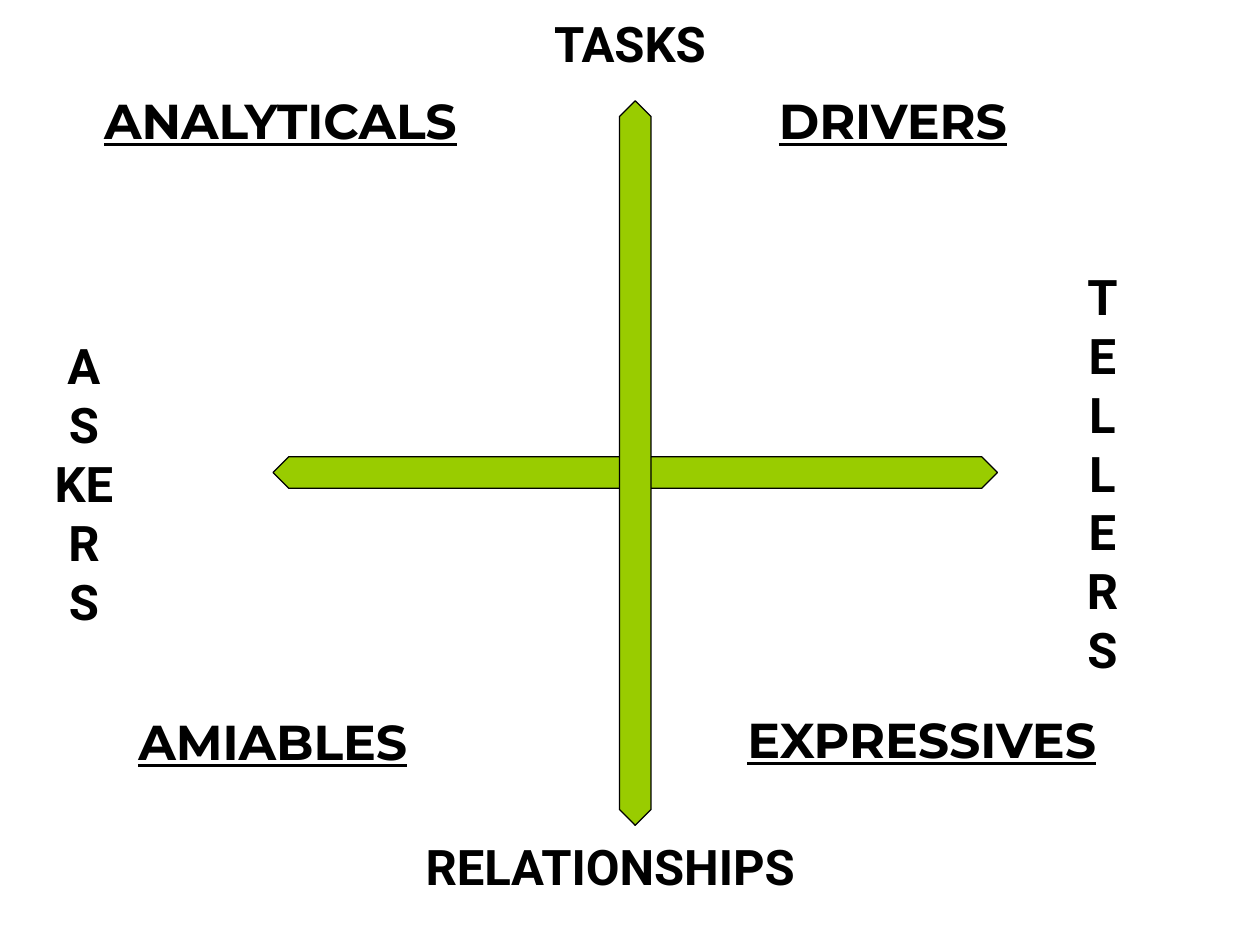
from pptx import Presentation
from pptx.dml.color import RGBColor
from pptx.enum import shapes, text
from pptx.util import Pt

COLORS = {"ink": "000000", "arrow": "99CC00"}
AXIS_FONT, STYLE_FONT = "Roboto", "Montserrat"
ARROW_WIDTH, ARROW_LENGTH = 18, 414
INSET = 7.2


def add_label(page, wording, left, top, width, height, font=AXIS_FONT):
    box = page.shapes.add_textbox(Pt(left), Pt(top), Pt(width), Pt(height))
    frame = box.text_frame
    frame.word_wrap = True
    para = frame.paragraphs[0]
    span = para.add_run()
    span.text = wording
    span.font.name = font
    span.font.size = Pt(28)
    span.font.bold = True
    span.font.color.rgb = RGBColor.from_string(COLORS["ink"])
    return box


def add_centred_label(page, wording, *place):
    frame = add_label(page, wording, *place).text_frame
    frame.vertical_anchor = text.MSO_ANCHOR.MIDDLE
    frame.paragraphs[0].alignment = text.PP_ALIGN.CENTER


def add_style_name(page, wording, left, top, width):
    frame = add_label(page, wording, left, top, width, 41, STYLE_FONT).text_frame
    frame.auto_size = text.MSO_AUTO_SIZE.SHAPE_TO_FIT_TEXT
    frame.paragraphs[0].runs[0].font.underline = True


def add_axis_arrow(page, center_x, center_y, rotation=0):
    arrow = page.shapes.add_shape(
        shapes.MSO_SHAPE.UP_DOWN_ARROW,
        Pt(center_x - ARROW_WIDTH / 2), Pt(center_y - ARROW_LENGTH / 2),
        Pt(ARROW_WIDTH), Pt(ARROW_LENGTH))
    arrow.rotation = rotation
    arrow.adjustments[0] = 0.875
    arrow.adjustments[1] = 1.82
    arrow.shadow.inherit = False
    arrow.fill.solid()
    arrow.fill.fore_color.rgb = RGBColor.from_string(COLORS["arrow"])
    arrow.line.color.rgb = RGBColor.from_string(COLORS["ink"])
    arrow.line.width = Pt(0.75)


def main():
    deck = Presentation()
    deck.slide_width, deck.slide_height = Pt(720), Pt(540)
    page = deck.slides.add_slide(deck.slide_layouts[6])

    # Crossing axes, the vertical one in front
    add_axis_arrow(page, 363, 270, rotation=270)
    add_axis_arrow(page, 363, 264.6)

    # Axis ends; the narrow side boxes break the words into columns
    add_centred_label(page, "TELLERS", 612, 0, 36, 540)
    add_centred_label(page, "ASKERS", 23.88, 0, 48.24, 552)
    add_centred_label(page, "TASKS", 108, 6.5, 504, 36)
    relationships = add_label(page, "RELATIONSHIPS", 126, 474.5, 468, 66)
    relationships.text_frame.margin_left = Pt(INSET + 110)

    # Style names in the four quadrants
    for wording, left, top, width in (
        ("DRIVERS", 438, 48, 174),
        ("EXPRESSIVES", 420, 402, 264),
        ("ANALYTICALS", 52.5, 48, 235.5),
        ("AMIABLES", 72, 403, 228),
    ):
        add_style_name(page, wording, left, top, width)

    deck.save("out.pptx")


if __name__ == "__main__":
    main()
